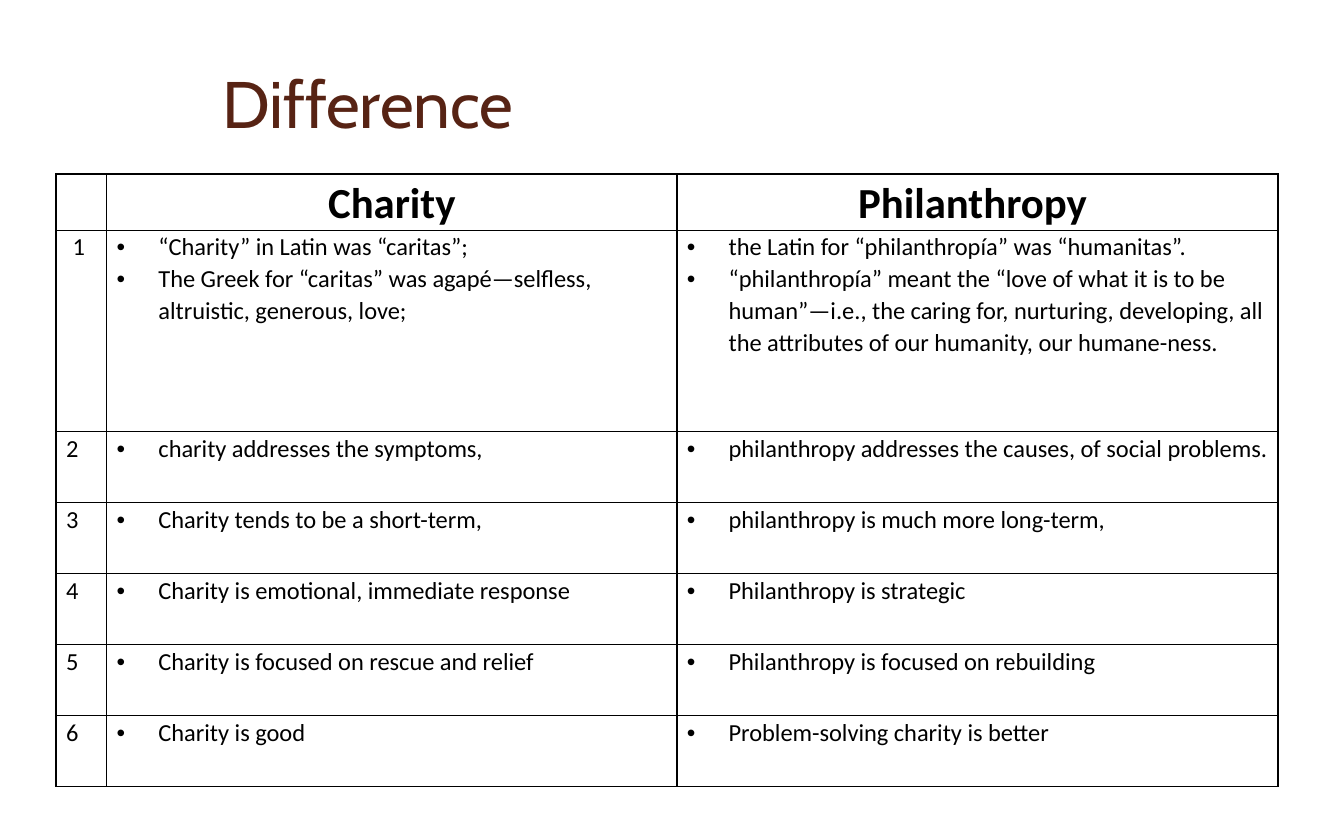
from dataclasses import dataclass

from lxml import etree
from pptx import Presentation
from pptx.dml.color import RGBColor
from pptx.enum import text as t
from pptx.oxml import ns
from pptx.util import Inches, Pt


@dataclass(frozen=True)
class Theme:
    title_font: str = "Cabin"
    body_font: str = "Calibri"
    title_color: str = "572314"
    ink: str = "000000"
    paper: str = "FFFFFF"
    title_size: int = 43
    header_size: int = 28
    body_size: int = 16
    line_spacing: float = 1.07
    border: int = 1


THEME = Theme()
HANGING = 0.38
COLUMN_WIDTHS = (0.46, 5.18, 5.46)
ROW_HEIGHTS = (0.51, 1.83) + (0.645,) * 5
HEADERS = ("", "Charity", "Philanthropy ")
DIFFERENCES = (
    (("“Charity” in Latin was “caritas”;",
      "The Greek for “caritas” was agapé—selfless, altruistic, generous, love;"),
     ("the Latin for “philanthropía” was “humanitas”.",
      "“philanthropía” meant the “love of what it is to be human”—i.e., the caring for, "
      "nurturing, developing, all the attributes of our humanity, our humane-ness.")),
    (("charity addresses the symptoms,",),
     ("philanthropy addresses the causes, of social problems.",)),
    (("Charity tends to be a short-term,",),
     ("philanthropy is much more long-term,",)),
    (("Charity is emotional, immediate response",),
     ("Philanthropy is strategic",)),
    (("Charity is focused on rescue and relief",),
     ("Philanthropy is focused on rebuilding",)),
    (("Charity is good",),
     ("Problem-solving charity is better",)),
)


def set_font(paragraph, name, size, color, bold=False):
    font = paragraph.font
    font.name, font.size, font.bold = name, Pt(size), bold
    font.color.rgb = RGBColor.from_string(color)


def set_indent(paragraph, left, first_line=0):
    properties = paragraph._p.get_or_add_pPr()
    properties.set("marL", str(Inches(left)))
    properties.set("indent", str(Inches(first_line)))
    return properties


def add_bullet(paragraph):
    properties = set_indent(paragraph, HANGING, -HANGING)
    face = etree.SubElement(properties, ns.qn("a:buFont"))
    face.set("typeface", "Arial")
    etree.SubElement(properties, ns.qn("a:buChar")).set("char", "•")


def style_cell(cell):
    """Give the cell its insets, thin border on every side and plain fill."""
    cell.margin_left = cell.margin_right = Inches(0.09)
    cell.margin_top = cell.margin_bottom = 0
    properties = cell._tc.get_or_add_tcPr()
    for side in "LRTB":
        line = etree.SubElement(properties, ns.qn(f"a:ln{side}"))
        line.set("w", str(Pt(THEME.border)))
        fill = etree.SubElement(line, ns.qn("a:solidFill"))
        etree.SubElement(fill, ns.qn("a:srgbClr")).set("val", THEME.ink)
    cell.fill.solid()
    cell.fill.fore_color.rgb = RGBColor.from_string(THEME.paper)


def fill_cell(cell, lines, size=THEME.body_size, bold=False, bulleted=False):
    style_cell(cell)
    cell.text = "\n".join(lines)
    for paragraph in cell.text_frame.paragraphs:
        paragraph.line_spacing = THEME.line_spacing
        if bulleted:
            add_bullet(paragraph)
        set_font(paragraph, THEME.body_font, size, THEME.ink, bold)


def add_title(slide, wording):
    title = slide.shapes.add_textbox(Inches(1.92), Inches(0.3), Inches(10.01), Inches(1.25))
    frame = title.text_frame
    frame.word_wrap = True
    frame.vertical_anchor = t.MSO_ANCHOR.MIDDLE
    frame.text = wording
    set_font(frame.paragraphs[0], THEME.title_font, THEME.title_size, THEME.title_color)


def add_comparison(slide):
    table = slide.shapes.add_table(
        len(ROW_HEIGHTS), len(COLUMN_WIDTHS), Inches(0.51), Inches(1.58),
        Inches(sum(COLUMN_WIDTHS)), Inches(sum(ROW_HEIGHTS))).table
    table.first_row = table.horz_banding = False
    for column, width in zip(table.columns, COLUMN_WIDTHS):
        column.width = Inches(width)
    for row, height in zip(table.rows, ROW_HEIGHTS):
        row.height = Inches(height)

    for column, header in enumerate(HEADERS):
        cell = table.cell(0, column)
        fill_cell(cell, [header], THEME.header_size if header else THEME.body_size, bold=True)
        if header:
            heading = cell.text_frame.paragraphs[0]
            heading.alignment = t.PP_ALIGN.CENTER
            set_indent(heading, HANGING, -HANGING)

    for number, sides in enumerate(DIFFERENCES, start=1):
        fill_cell(table.cell(number, 0), [str(number)])
        for column, points in enumerate(sides, start=1):
            fill_cell(table.cell(number, column), points, bulleted=True)
    set_indent(table.cell(1, 0).text_frame.paragraphs[0], 0.06)


def main():
    deck = Presentation()
    deck.slide_width, deck.slide_height = Inches(12.21), Inches(7.5)
    slide = deck.slides.add_slide(deck.slide_layouts[6])
    add_title(slide, "Difference")
    add_comparison(slide)
    deck.save("out.pptx")


if __name__ == "__main__":
    main()
